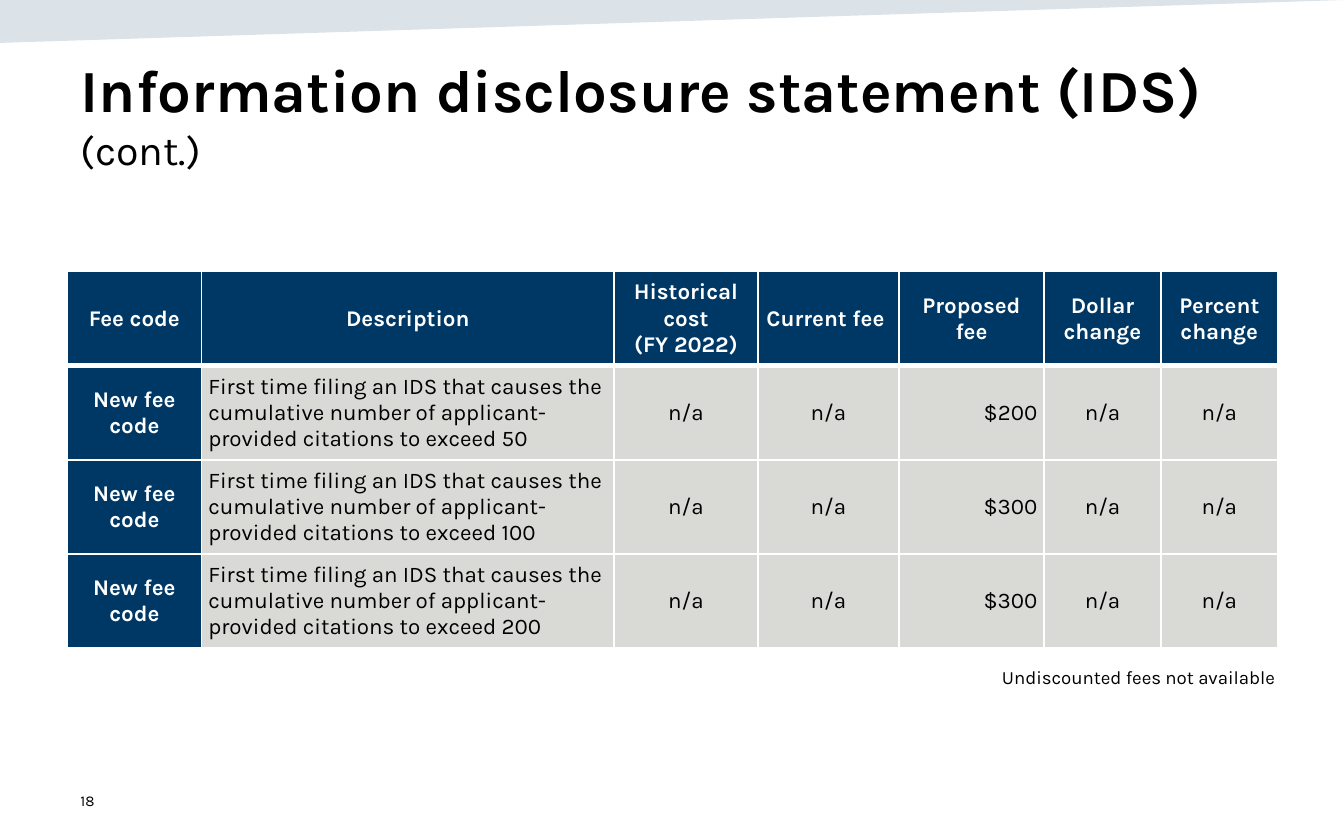
"""Builds the slide on proposed IDS fees."""
from lxml import etree
from pptx import Presentation
from pptx import util as u
from pptx.dml.color import RGBColor
from pptx.enum import text
from pptx.oxml import ns

NAVY = RGBColor(0x00, 0x38, 0x65)
GREY = RGBColor(0xD9, 0xD9, 0xD6)
BAND = RGBColor(0x16, 0x44, 0x69)
WHITE = RGBColor(0xFF, 0xFF, 0xFF)
BLACK = RGBColor(0x00, 0x00, 0x00)
FONT = "Karla"
LEFT, CENTER, RIGHT = text.PP_ALIGN.LEFT, text.PP_ALIGN.CENTER, text.PP_ALIGN.RIGHT
TOP, MIDDLE = text.MSO_ANCHOR.TOP, text.MSO_ANCHOR.MIDDLE

HEADINGS = ["Fee code", "Description", "Historical cost\n(FY 2022)", "Current fee ",
            "Proposed fee", "Dollar change", "Percent change"]
ALIGNMENTS = [CENTER, LEFT, CENTER, CENTER, RIGHT, CENTER, CENTER]
COLUMN_WIDTHS = [72, 221, 77, 75.6, 77.8, 62.6, 62.6]
FEES = [(50, "$200"), (100, "$300"), (200, "$300")]
DESCRIPTION = ("First time filing an IDS that causes the cumulative number of "
               "applicant-provided citations to exceed {}")


def points(box):
    """Turn a box of plain numbers into lengths."""
    return [u.Pt(value) for value in box]


def add_span(para, words, size=12, color=BLACK, bold=False):
    """Append formatted text to a paragraph."""
    span = para.add_run()
    span.text = words
    span.font.name = FONT
    span.font.size = u.Pt(size)
    span.font.bold = bold
    span.font.color.rgb = color


def add_label(page, box, words, size, align=LEFT, anchor=TOP):
    """Place one line of text in a box."""
    frame = page.shapes.add_textbox(*points(box)).text_frame
    frame.word_wrap = True
    frame.vertical_anchor = anchor
    frame.paragraphs[0].alignment = align
    add_span(frame.paragraphs[0], words, size=size)


def add_band(page, box):
    """Draw the pale wedge that narrows to the right."""
    left, top, width, height = points(box)
    builder = page.shapes.build_freeform(left, top)
    builder.add_line_segments([(left, top + height), (left + width, top)], close=True)
    wedge = builder.convert_to_shape()
    wedge.shadow.inherit = False
    wedge.line.fill.background()
    wedge.fill.solid()
    wedge.fill.fore_color.rgb = BAND
    color = wedge.element.spPr.find(ns.qn("a:solidFill"))[0]
    etree.SubElement(color, ns.qn("a:alpha"), val="15000")


def add_title(page, box):
    """Move the title placeholder and fill in its two sizes of text."""
    title = page.shapes.title
    title.left, title.top, title.width, title.height = points(box)
    frame = title.text_frame
    frame.word_wrap = True
    frame.auto_size = text.MSO_AUTO_SIZE.NONE
    frame.vertical_anchor = TOP
    para = frame.paragraphs[0]
    para.alignment = LEFT
    add_span(para, "Information disclosure statement (IDS) ", size=32, bold=True)
    add_span(para, "(cont.)", size=22)


def set_borders(cell, bottoms):
    """Give a cell white borders, with chosen widths for top and bottom."""
    properties = cell._tc.get_or_add_tcPr()
    widths = {"a:lnL": 1, "a:lnR": 1, "a:lnT": bottoms[0], "a:lnB": bottoms[1]}
    for place, (tag, width) in enumerate(widths.items()):
        line = etree.Element(ns.qn(tag), w=str(u.Pt(width)))
        fill = etree.SubElement(line, ns.qn("a:solidFill"))
        etree.SubElement(fill, ns.qn("a:srgbClr"), val=str(WHITE))
        properties.insert(place, line)


def fill_cell(cell, words, align, heading, spacing):
    """Format a cell and write its text, one paragraph per line."""
    cell.fill.solid()
    cell.fill.fore_color.rgb = NAVY if heading else GREY
    cell.vertical_anchor = MIDDLE
    cell.margin_left = cell.margin_right = u.Pt(3.6)
    cell.margin_top = cell.margin_bottom = u.Pt(3.6)
    frame = cell.text_frame
    for number, line in enumerate(words.split("\n")):
        para = frame.add_paragraph() if number else frame.paragraphs[0]
        para.alignment = align
        para.space_before = para.space_after = u.Pt(spacing)
        add_span(para, line, color=WHITE if heading else BLACK, bold=heading)


def add_fee_table(page, box):
    """Build the table with a heading row and a heading column."""
    rows = [HEADINGS] + [
        ["New fee code", DESCRIPTION.format(limit), "n/a", "n/a", fee, "n/a", "n/a"]
        for limit, fee in FEES]
    table = page.shapes.add_table(len(rows), len(HEADINGS), *points(box)).table
    table.horz_banding = False
    for column, width in zip(table.columns, COLUMN_WIDTHS):
        column.width = u.Pt(width)
    for r, values in enumerate(rows):
        table.rows[r].height = u.Pt(box[3] / len(rows))
        for c, words in enumerate(values):
            cell = table.cell(r, c)
            align = ALIGNMENTS[c] if r else CENTER
            fill_cell(cell, words, align, heading=r == 0 or c == 0, spacing=6 if r else 0)
            set_borders(cell, (3 if r == 1 else 1, 1 if r else 3))


def main():
    """Assemble and save the deck."""
    deck = Presentation()
    deck.slide_width, deck.slide_height = points((720, 450))
    page = deck.slides.add_slide(deck.slide_layouts[5])
    add_band(page, (0, 0, 720, 23))
    add_label(page, (36, 417, 162, 24), "18", 8, anchor=MIDDLE)
    add_title(page, (36, 24.5, 648, 75))
    add_fee_table(page, (36, 145.5, 648, 196))
    add_label(page, (485, 353, 205, 19.5), "Undiscounted fees not available", 10, align=RIGHT)
    deck.save("out.pptx")


if __name__ == "__main__":
    main()
